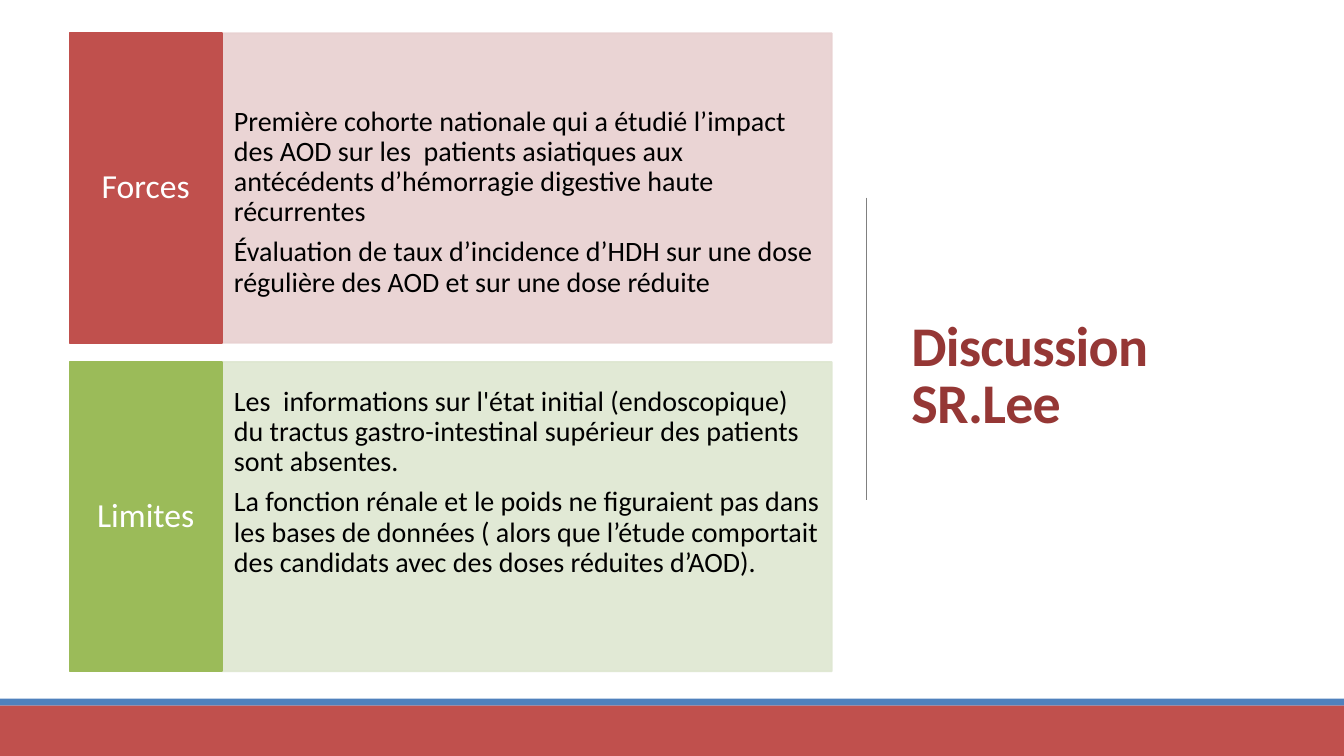
from dataclasses import dataclass

from lxml import etree
from pptx import Presentation
from pptx.dml.color import RGBColor
from pptx.enum.shapes import MSO_CONNECTOR, MSO_SHAPE
from pptx.enum.text import MSO_ANCHOR, PP_ALIGN
from pptx.oxml.ns import qn
from pptx.shapes.autoshape import Shape
from pptx.slide import Slide
from pptx.util import Inches, Length, Pt

RECTANGLE = MSO_SHAPE.RECTANGLE
STRAIGHT = MSO_CONNECTOR.STRAIGHT
TOP, MIDDLE = MSO_ANCHOR.TOP, MSO_ANCHOR.MIDDLE
LEFT, CENTER = PP_ALIGN.LEFT, PP_ALIGN.CENTER

WHITE = RGBColor(0xFF, 0xFF, 0xFF)
BLACK = RGBColor(0x00, 0x00, 0x00)
RED = RGBColor(0xC0, 0x50, 0x4D)
PALE_RED = RGBColor(0xE8, 0xD0, 0xD0)
DARK_RED = RGBColor(0x95, 0x37, 0x35)
GREEN = RGBColor(0x9B, 0xBB, 0x59)
PALE_GREEN = RGBColor(0xDE, 0xE7, 0xD1)
BLUE = RGBColor(0x4F, 0x81, 0xBD)
GREY = RGBColor(0x80, 0x80, 0x80)

FONT = "Calibri"
SLIDE_WIDTH, SLIDE_HEIGHT = Inches(13.33), Inches(7.5)

LABEL_LEFT, LABEL_WIDTH = 5.18, 11.32
PANEL_LEFT, PANEL_WIDTH = LABEL_LEFT + LABEL_WIDTH, 45.38
FIRST_ROW, ROW_HEIGHT, ROW_PITCH = 4.4, 40.93, 43.47
STRIPE_TOP, BAND_TOP = 92.4, 93.33


@dataclass(frozen=True)
class Topic:
    label: str
    arguments: tuple[str, ...]
    color: RGBColor
    tint: RGBColor
    text_offset: float


@dataclass(frozen=True)
class FooterBand:
    top: float
    bottom: float
    color: RGBColor


TOPICS = (
    Topic(
        "Forces",
        (
            "Première cohorte nationale qui a étudié l’impact des AOD sur les  patients "
            "asiatiques aux antécédents d’hémorragie digestive haute récurrentes",
            "Évaluation de taux d’incidence d’HDH sur une dose régulière des AOD "
            "et sur une dose réduite",
        ),
        RED, PALE_RED, 9.73,
    ),
    Topic(
        "Limites",
        (
            "Les  informations sur l'état initial (endoscopique) du tractus "
            "gastro-intestinal supérieur des patients sont absentes.",
            "La fonction rénale et le poids ne figuraient pas dans les bases de données "
            "( alors que l’étude comportait des candidats avec des doses réduites d’AOD).",
        ),
        GREEN, PALE_GREEN, 3.33,
    ),
)
FOOTER = (FooterBand(STRIPE_TOP, BAND_TOP, BLUE), FooterBand(BAND_TOP, 100, RED))


def across(percent: float) -> Length:
    return Length(round(SLIDE_WIDTH * percent / 100))


def down(percent: float) -> Length:
    return Length(round(SLIDE_HEIGHT * percent / 100))


def add_block(slide: Slide, left: float, top: float, width: float, height: float,
              color: RGBColor) -> Shape:
    block = slide.shapes.add_shape(
        RECTANGLE, across(left), down(top), across(width), down(height))
    block.shadow.inherit = False
    block.fill.solid()
    block.fill.fore_color.rgb = color
    block.line.fill.background()
    return block


def outline(block: Shape, color: RGBColor) -> None:
    block.line.color.rgb = color
    block.line.width = Pt(1.25)


def make_translucent(block: Shape, opacity: int) -> None:
    for color in block._element.spPr.iter(qn("a:srgbClr")):
        etree.SubElement(color, qn("a:alpha"), val=str(opacity * 1000))


def write(block: Shape, texts: tuple[str, ...], size: int, color: RGBColor,
          align: PP_ALIGN, spacing: float = 0.9, bold: bool = False) -> None:
    frame = block.text_frame
    frame.word_wrap = True
    for index, text in enumerate(texts):
        paragraph = frame.add_paragraph() if index else frame.paragraphs[0]
        paragraph.text = text
        paragraph.alignment = align
        paragraph.line_spacing = spacing
        paragraph.space_after = Pt(0.35 * size)
        paragraph.font.name = FONT
        paragraph.font.size = Pt(size)
        paragraph.font.bold = bold
        paragraph.font.color.rgb = color


def add_topic(slide: Slide, topic: Topic, top: float) -> None:
    panel = add_block(slide, PANEL_LEFT, top, PANEL_WIDTH, ROW_HEIGHT, topic.tint)
    outline(panel, topic.tint)
    make_translucent(panel, 90)
    frame = panel.text_frame
    frame.vertical_anchor = TOP
    frame.margin_left = frame.margin_right = Inches(0.12)
    frame.margin_top = down(topic.text_offset)
    write(panel, topic.arguments, 20, BLACK, LEFT)

    label = add_block(slide, LABEL_LEFT, top, LABEL_WIDTH, ROW_HEIGHT, topic.color)
    outline(label, topic.color)
    label.text_frame.vertical_anchor = MIDDLE
    write(label, (topic.label,), 24, WHITE, CENTER)


def add_title(slide: Slide) -> None:
    title = slide.shapes.add_textbox(across(67.07), down(16.93), across(27.68), down(66))
    title.text_frame.vertical_anchor = MIDDLE
    write(title, ("Discussion\vSR.Lee",), 40, DARK_RED, LEFT, 0.85, True)
    for run in title.text_frame.paragraphs[0].runs:
        run._r.get_or_add_rPr().set("spc", "-50")


def add_divider(slide: Slide) -> None:
    divider = slide.shapes.add_connector(
        STRAIGHT, across(64.44), down(26.13), across(64.44), down(66.13))
    divider.line.color.rgb = GREY
    divider.line.width = Pt(0.5)
    etree.SubElement(divider._element.spPr, qn("a:effectLst"))


def main() -> None:
    presentation = Presentation()
    presentation.slide_width = SLIDE_WIDTH
    presentation.slide_height = SLIDE_HEIGHT
    slide = presentation.slides.add_slide(presentation.slide_layouts[6])
    add_title(slide)
    add_divider(slide)
    for band in FOOTER:
        add_block(slide, 0, band.top, 100, band.bottom - band.top, band.color)
    for row, topic in enumerate(TOPICS):
        add_topic(slide, topic, FIRST_ROW + row * ROW_PITCH)
    presentation.save("out.pptx")


if __name__ == "__main__":
    main()
